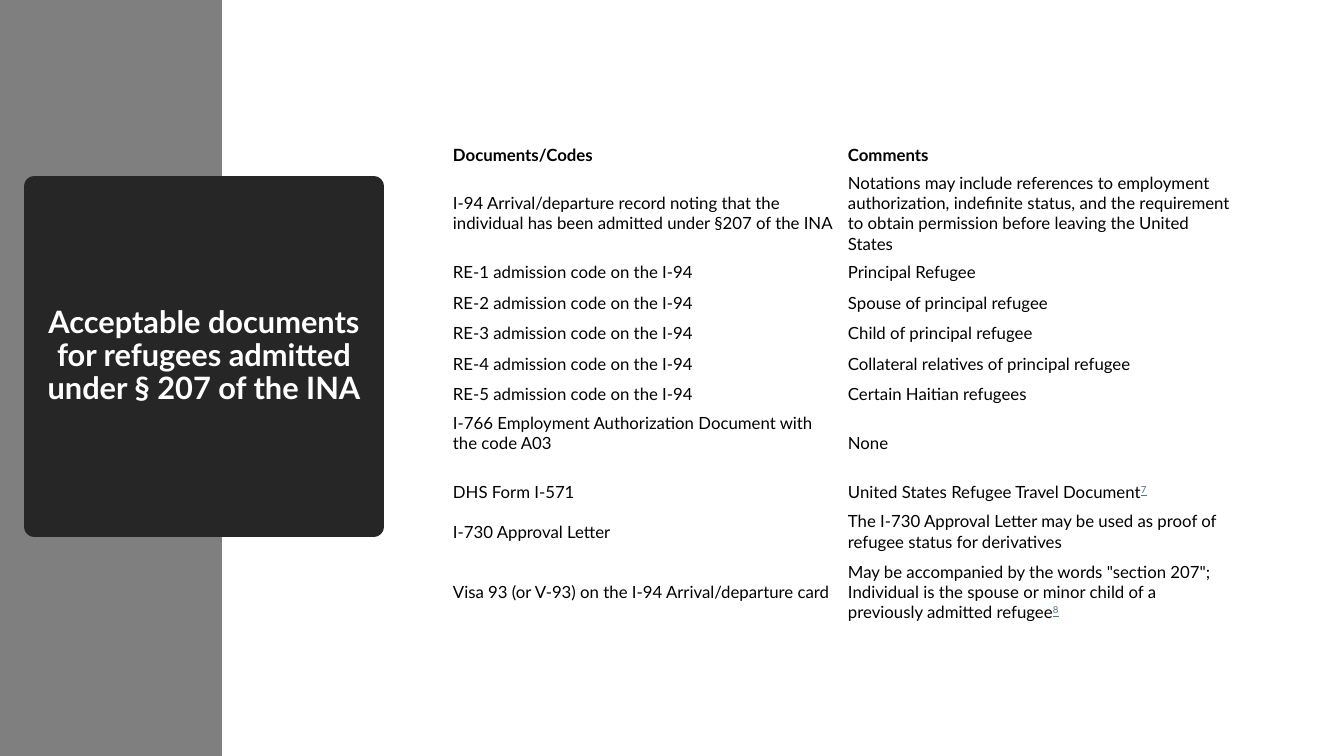
from dataclasses import dataclass

from lxml.etree import SubElement
from pptx import Presentation
from pptx.dml.color import RGBColor
from pptx.enum.shapes import MSO_SHAPE
from pptx.enum.text import MSO_ANCHOR, MSO_AUTO_SIZE, PP_ALIGN
from pptx.oxml.ns import qn
from pptx.util import Pt

SLIDE_WIDTH, SLIDE_HEIGHT = 1344, 756
EMU_PER_PX = 12192000 / SLIDE_WIDTH


@dataclass(frozen=True)
class Theme:
    font: str = "Lato"
    band: RGBColor = RGBColor(0x7F, 0x7F, 0x7F)
    circle: RGBColor = RGBColor(0x26, 0x26, 0x26)
    title_text: RGBColor = RGBColor(0xFF, 0xFF, 0xFF)
    body_text: RGBColor = RGBColor(0, 0, 0)
    footnote: RGBColor = RGBColor(0x46, 0x78, 0x86)
    title_size: int = 22
    body_size: int = 12
    outline: float = 13.75


THEME = Theme()

TITLE = "Acceptable documents for refugees admitted under § 207 of the INA"
HEADINGS = ("Documents/Codes", "Comments")
COLUMN_WIDTHS = (395, 397)

# Row height, document, comment, footnote mark
DOCUMENTS = [
    (76, "I-94 Arrival/departure record noting that the individual has been "
         "admitted under §207 of the INA",
     "Notations may include references to employment authorization, indefinite "
     "status, and the requirement to obtain permission before leaving the "
     "United States", ""),
    (31, "RE-1 admission code on the I-94", "Principal Refugee", ""),
    (30, "RE-2 admission code on the I-94", "Spouse of principal refugee", ""),
    (31, "RE-3 admission code on the I-94", "Child of principal refugee", ""),
    (30, "RE-4 admission code on the I-94",
     "Collateral relatives of principal refugee", ""),
    (31, "RE-5 admission code on the I-94", "Certain Haitian refugees", ""),
    (67, "I-766 Employment Authorization Document with the code A03", "None", ""),
    (30, "DHS Form I-571", "United States Refugee Travel Document", "7"),
    (50, "I-730 Approval Letter",
     "The I-730 Approval Letter may be used as proof of refugee status for "
     "derivatives", ""),
    (71, "Visa 93 (or V-93) on the I-94 Arrival/departure card",
     'May be accompanied by the words "section 207"; Individual is the spouse '
     "or minor child of a previously admitted refugee", "8"),
]
HEADING_HEIGHT = 30
EMPLOYMENT_ROW = 7
EMPLOYMENT_BOTTOM_INSET = 23


def px(length):
    return round(length * EMU_PER_PX)


def apply_format(target, values):
    for name, value in values.items():
        setattr(target, name, value)


def add_text(paragraph, text, size, color, **extra):
    run = paragraph.add_run()
    run.text = text
    apply_format(run.font, {"name": THEME.font, "size": Pt(size), **extra})
    run.font.color.rgb = color
    return run


def add_band(slide):
    band = slide.shapes.add_shape(MSO_SHAPE.RECTANGLE, 0, 0, px(222), px(SLIDE_HEIGHT))
    band.shadow.inherit = False
    band.fill.solid()
    band.fill.fore_color.rgb = THEME.band
    band.line.fill.background()


def place_title_circle(slide):
    title = slide.shapes.title
    apply_format(title, {"left": px(34), "top": px(186),
                         "width": px(340), "height": px(341)})

    # Round outline, brought in front of the band
    geometry = SubElement(title._element.spPr, qn("a:prstGeom"), prst="ellipse")
    SubElement(geometry, qn("a:avLst"))
    slide.shapes._spTree.append(title._element)
    title.fill.solid()
    title.fill.fore_color.rgb = THEME.circle
    title.line.color.rgb = THEME.circle
    title.line.width = Pt(THEME.outline)

    frame = title.text_frame
    apply_format(frame, {"word_wrap": True, "auto_size": MSO_AUTO_SIZE.NONE,
                         "vertical_anchor": MSO_ANCHOR.MIDDLE})
    paragraph = frame.paragraphs[0]
    apply_format(paragraph, {"alignment": PP_ALIGN.CENTER, "line_spacing": 0.9,
                             "space_before": Pt(0), "space_after": Pt(6)})
    add_text(paragraph, TITLE, THEME.title_size, THEME.title_text, bold=True)


def fill_cell(cell, text, bold=False, mark=""):
    cell.fill.background()
    apply_format(cell, {"margin_left": px(7), "margin_right": px(7),
                        "margin_top": px(3), "margin_bottom": px(3),
                        "vertical_anchor": MSO_ANCHOR.MIDDLE})
    paragraph = cell.text_frame.paragraphs[0]
    add_text(paragraph, text, THEME.body_size, THEME.body_text, bold=bold)
    if mark:
        footnote = add_text(paragraph, mark, THEME.body_size, THEME.footnote,
                            bold=False, underline=True)
        footnote._r.get_or_add_rPr().set("baseline", "30000")


def add_documents_table(slide):
    rows = [(HEADING_HEIGHT, *HEADINGS, ""), *DOCUMENTS]
    table = slide.shapes.add_table(
        len(rows), len(COLUMN_WIDTHS), px(446), px(140),
        px(sum(COLUMN_WIDTHS)), px(sum(row[0] for row in rows))).table
    apply_format(table, {"first_row": False, "horz_banding": False})
    for column, width in zip(table.columns, COLUMN_WIDTHS):
        column.width = px(width)
    for index, (height, document, comment, mark) in enumerate(rows):
        table.rows[index].height = px(height)
        heading = index == 0
        fill_cell(table.cell(index, 0), document, heading)
        fill_cell(table.cell(index, 1), comment, heading, mark)

    # The employment document sits high in its row
    table.cell(EMPLOYMENT_ROW, 0).margin_bottom = px(EMPLOYMENT_BOTTOM_INSET)


def main():
    deck = Presentation()
    apply_format(deck, {"slide_width": px(SLIDE_WIDTH),
                        "slide_height": px(SLIDE_HEIGHT)})
    slide = deck.slides.add_slide(deck.slide_layouts[5])
    add_band(slide)
    place_title_circle(slide)
    add_documents_table(slide)
    deck.save("out.pptx")


if __name__ == "__main__":
    main()
